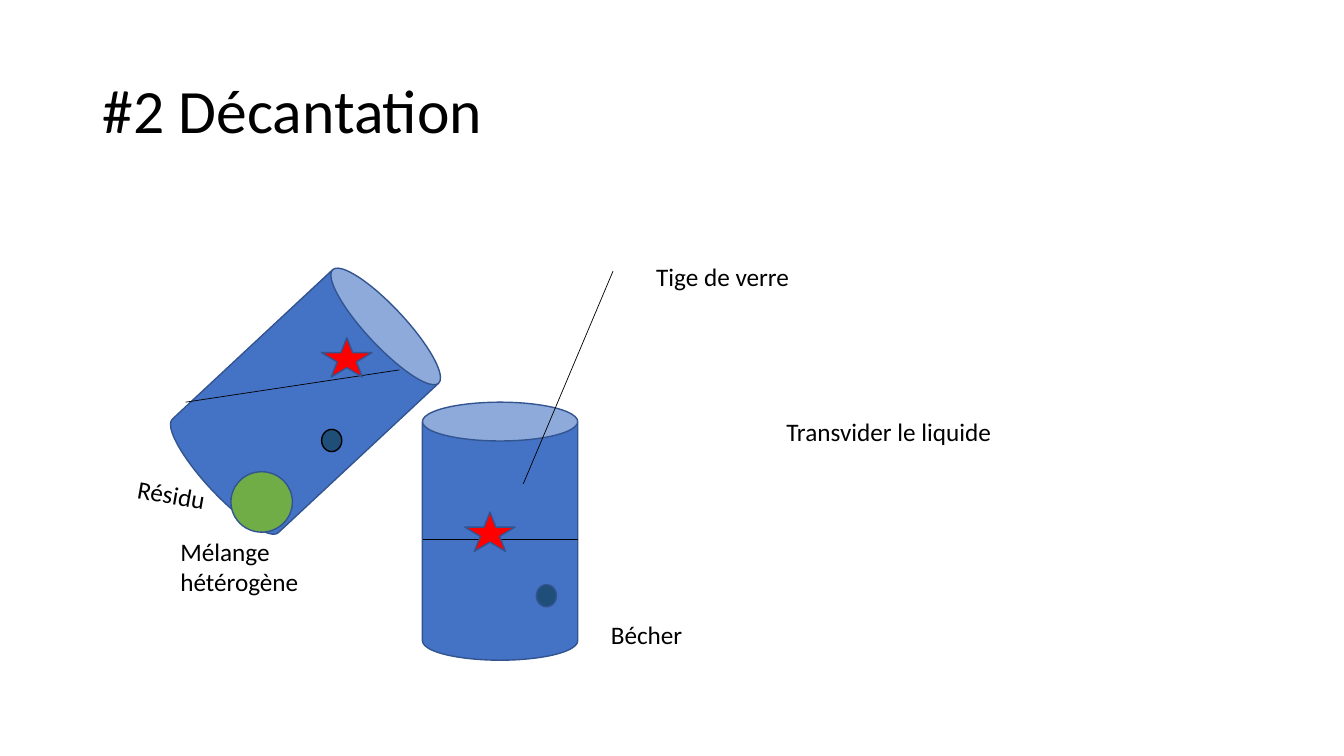
import pptx
import pptx.dml.color
import pptx.enum.shapes
import pptx.enum.text
import pptx.oxml.ns
import pptx.util
from lxml import etree

PX = 9144  # 100 px to the inch
COLORS = {
    "black": "000000",
    "glass": "4472C4",
    "outline": "325491",
    "residue": "70AD47",
    "star": "FF0000",
    "grain": "1F4E79",
}
SHAPES = pptx.enum.shapes.MSO_SHAPE


def color(name):
    return pptx.dml.color.RGBColor.from_string(COLORS[name])


def write_text(frame, text, size=18, line_spacing=None, anchor="TOP", auto_size="SHAPE_TO_FIT_TEXT"):
    frame.word_wrap = True
    frame.auto_size = pptx.enum.text.MSO_AUTO_SIZE[auto_size]
    frame.vertical_anchor = pptx.enum.text.MSO_ANCHOR[anchor]
    paragraph = frame.paragraphs[0]
    paragraph.alignment = pptx.enum.text.PP_ALIGN.LEFT
    paragraph.line_spacing = line_spacing
    run = paragraph.add_run()
    run.text = text
    run.font.name = "Calibri"
    run.font.size = pptx.util.Pt(size)
    run.font.color.rgb = color("black")


presentation = pptx.Presentation()
presentation.slide_width = 1333 * PX
presentation.slide_height = 750 * PX
slide = presentation.slides.add_slide(presentation.slide_layouts[5])

title = slide.shapes.title
title.left, title.top, title.width, title.height = (n * PX for n in (92, 40, 1150, 145))
write_text(title.text_frame, "#2 Décantation", size=44, line_spacing=0.9, anchor="MIDDLE", auto_size="NONE")

# Back to front: beakers, liquid levels, contents, glass rod
beakers = [
    (SHAPES.CAN, (226, 270, 154, 256), 47, "glass", "outline"),
    (SHAPES.CAN, (419, 399, 154, 256), 0, "glass", "outline"),
]
liquid_levels = [(184, 399, 396, 367), (420, 535, 573, 535)]
contents = [
    (SHAPES.OVAL, (229, 468, 61, 60), 0, "residue", "outline"),
    (SHAPES.STAR_5_POINT, (319, 335, 50, 39), 0, "star", "outline"),
    (SHAPES.STAR_5_POINT, (461, 508, 50, 39), 0, "star", "outline"),
    (SHAPES.OVAL, (532, 580, 20, 22), 0, "grain", "outline"),
    (SHAPES.OVAL, (319, 426, 20, 22), 0, "grain", "black"),
]
glass_rod = [(519, 480, 608, 269)]

for solids, lines in ((beakers, liquid_levels), (contents, glass_rod)):
    for preset, box, rotation, fill, outline in solids:
        shape = slide.shapes.add_shape(preset, *(n * PX for n in box))
        shape.rotation = rotation
        shape.shadow.inherit = False
        shape.fill.solid()
        shape.fill.fore_color.rgb = color(fill)
        shape.line.color.rgb = color(outline)
        shape.line.width = pptx.util.Pt(1)
    for ends in lines:
        connector = slide.shapes.add_connector(
            pptx.enum.shapes.MSO_CONNECTOR.STRAIGHT, *(n * PX for n in ends))
        connector.line.color.rgb = color("black")
        connector.line.width = pptx.util.Pt(0.5)
        etree.SubElement(connector._element.spPr, pptx.oxml.ns.qn("a:effectLst"))

labels = [
    ("Tige de verre", (641, 254, 208, 40), 0),
    ("Résidu", (126, 477, 163, 40), 10),
    ("Mélange hétérogène", (169, 527, 217, 71), 0),
    ("Bécher", (596, 609, 179, 40), 0),
    ("Transvider le liquide", (770, 408, 252, 40), 0),
]
for text, box, rotation in labels:
    label = slide.shapes.add_textbox(*(n * PX for n in box))
    label.rotation = rotation
    write_text(label.text_frame, text)

presentation.save("out.pptx")
